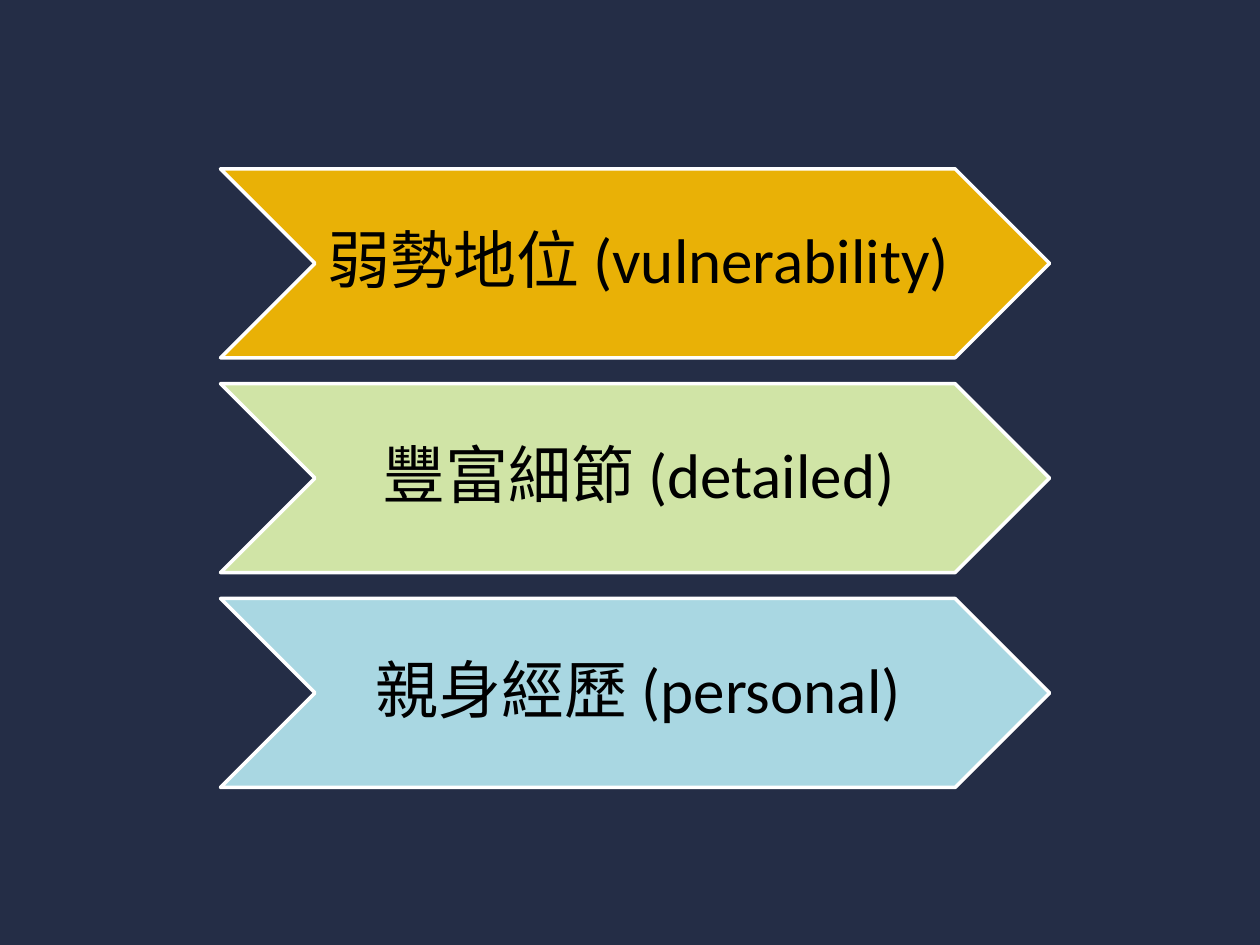
"""Build a slide with three stacked chevrons naming the qualities of a story."""
import dataclasses

import lxml.etree
import pptx
import pptx.dml.color
import pptx.enum.shapes
import pptx.enum.text
import pptx.oxml.ns
import pptx.shapes.autoshape
import pptx.slide
import pptx.text.text
import pptx.util

Inches = pptx.util.Inches
RGBColor = pptx.dml.color.RGBColor

NAVY = RGBColor(0x24, 0x2D, 0x46)
GOLD = RGBColor(0xFF, 0xC0, 0x00)
GREEN = RGBColor(0xD0, 0xE4, 0xA6)
BLUE = RGBColor(0xA9, 0xD7, 0xE2)
WHITE = RGBColor(0xFF, 0xFF, 0xFF)
BLACK = RGBColor(0x00, 0x00, 0x00)

CHINESE_FONT = "Noto Sans CJK SC"
LATIN_FONT = "Calibri"
LEFT, TOP = 1.75, 1.34
WIDTH, HEIGHT = 6.58, 1.5
PITCH = 1.705


@dataclasses.dataclass(frozen=True)
class Quality:
    """A chevron's wording and fill."""

    chinese: str
    english: str
    color: RGBColor
    opacity: int = 100


QUALITIES = (
    Quality("弱勢地位 ", "(vulnerability)", GOLD, opacity=90),
    Quality("豐富細節 ", "(detailed)", GREEN),
    Quality("親身經歷", " (personal)", BLUE),
)


def add_text(
    paragraph: pptx.text.text._Paragraph,
    text: str,
    *,
    font: str,
    size: float = 36,
    color: RGBColor = BLACK,
) -> None:
    """Append a run with the given format."""
    run = paragraph.add_run()
    run.text = text
    run.font.size = pptx.util.Pt(size)
    run.font.color.rgb = color
    run.font.name = font
    east_asian = lxml.etree.SubElement(
        run.font._element, pptx.oxml.ns.qn("a:ea")
    )
    east_asian.set("typeface", CHINESE_FONT)


def set_opacity(shape: pptx.shapes.autoshape.Shape, percent: int) -> None:
    """Make the solid fill of a shape partly transparent."""
    color = shape._element.spPr.find(
        f"{pptx.oxml.ns.qn('a:solidFill')}/{pptx.oxml.ns.qn('a:srgbClr')}"
    )
    alpha = lxml.etree.SubElement(color, pptx.oxml.ns.qn("a:alpha"))
    alpha.set("val", str(percent * 1000))


def add_chevron(slide: pptx.slide.Slide, quality: Quality, top: float) -> None:
    """Draw one labelled chevron."""
    shape = slide.shapes.add_shape(
        pptx.enum.shapes.MSO_SHAPE.CHEVRON,
        Inches(LEFT), Inches(top), Inches(WIDTH), Inches(HEIGHT),
    )
    shape.shadow.inherit = False
    shape.fill.solid()
    shape.fill.fore_color.rgb = quality.color
    if quality.opacity < 100:
        set_opacity(shape, quality.opacity)
    shape.line.color.rgb = WHITE
    shape.line.width = pptx.util.Pt(2)

    frame = shape.text_frame
    frame.word_wrap = True
    frame.vertical_anchor = pptx.enum.text.MSO_ANCHOR.MIDDLE
    frame.margin_left, frame.margin_right = Inches(0.05), Inches(0)
    frame.margin_top = frame.margin_bottom = Inches(0.03)
    paragraph = frame.paragraphs[0]
    paragraph.alignment = pptx.enum.text.PP_ALIGN.CENTER
    paragraph.line_spacing = 0.9
    add_text(paragraph, quality.chinese, font=CHINESE_FONT)
    add_text(paragraph, quality.english, font=LATIN_FONT)


def main() -> None:
    """Create and save the presentation."""
    presentation = pptx.Presentation()
    presentation.slide_width = Inches(10)
    presentation.slide_height = Inches(7.5)
    slide = presentation.slides.add_slide(presentation.slide_layouts[6])
    slide.background.fill.solid()
    slide.background.fill.fore_color.rgb = NAVY
    for index, quality in enumerate(QUALITIES):
        add_chevron(slide, quality, TOP + index * PITCH)
    presentation.save("out.pptx")


if __name__ == "__main__":
    main()
